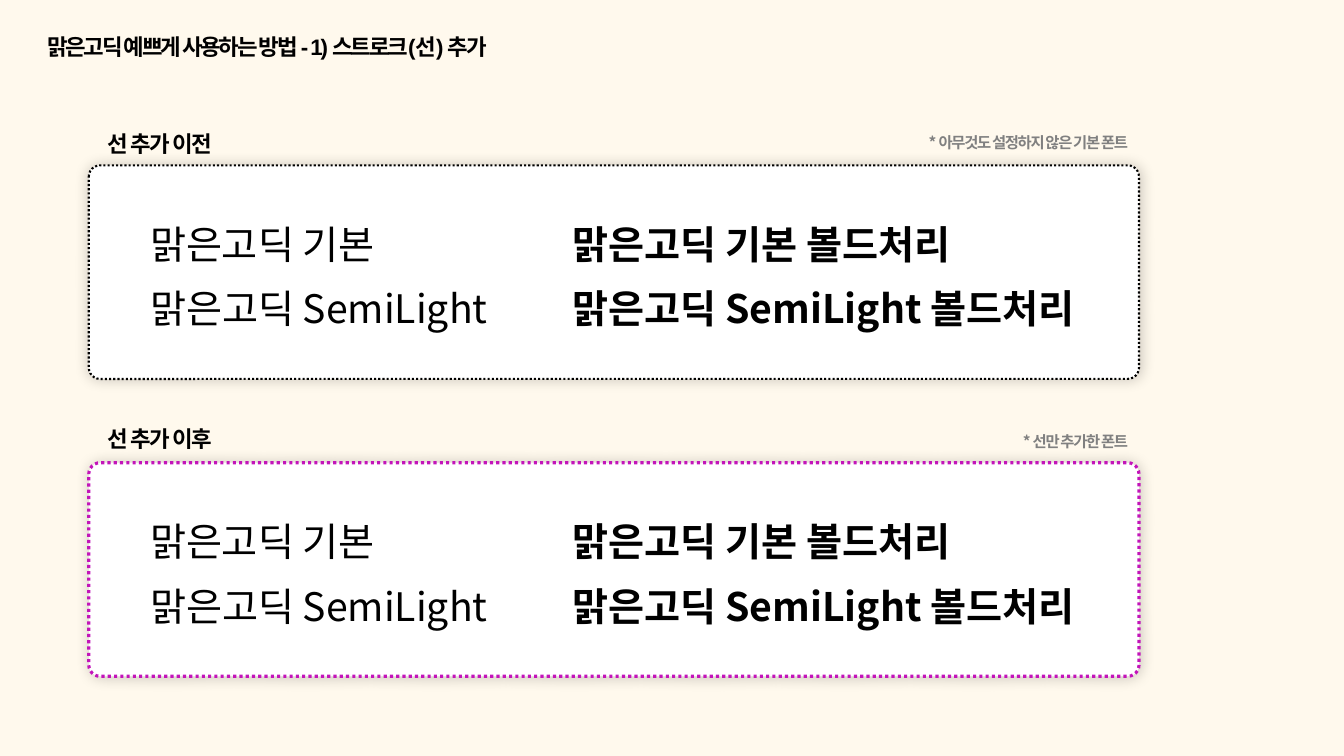
"""Build the slide comparing Malgun Gothic before and after adding an outline."""
from dataclasses import dataclass

from lxml import etree
from pptx import Presentation
from pptx.dml.color import RGBColor
from pptx.enum.dml import MSO_LINE
from pptx.enum.shapes import MSO_SHAPE
from pptx.enum.text import MSO_AUTO_SIZE, PP_ALIGN
from pptx.oxml import parse_xml
from pptx.oxml.ns import nsdecls, qn
from pptx.slide import Slide
from pptx.util import Pt

ROUNDED = MSO_SHAPE.ROUNDED_RECTANGLE
DOTTED = MSO_LINE.ROUND_DOT
GROW = MSO_AUTO_SIZE.SHAPE_TO_FIT_TEXT
LEFT, RIGHT = PP_ALIGN.LEFT, PP_ALIGN.RIGHT


@dataclass(frozen=True)
class Theme:
    """Colours, fonts and type sizes."""
    background: str = "FFF9ED"
    panel: str = "FFFFFF"
    ink: str = "000000"
    accent: str = "C314BA"
    muted: str = "808080"
    latin: str = "Arial"
    korean: str = "Noto Sans CJK KR"
    heading: float = 16
    sample: float = 28
    note: float = 11


@dataclass(frozen=True)
class Box:
    """Position and size in points."""
    left: float
    top: float
    width: float
    height: float


@dataclass(frozen=True)
class Panel:
    """One framed group of font samples with its label and note."""
    top: float
    line_color: str
    line_width: float
    label: str
    label_top: float
    label_height: float
    note: str
    note_box: Box


@dataclass(frozen=True)
class Sample:
    """One font sample within a panel."""
    text: str
    column: int
    row: int
    width: float
    font: str


THEME = Theme()
PANEL_LEFT, PANEL_WIDTH, PANEL_HEIGHT = 63.4, 750.2, 152.6
LABEL_LEFT, LABEL_WIDTH = 69.8, 121
COLUMNS = (100.1, 401.8)
ROW_OFFSET, ROW_PITCH, ROW_HEIGHT = 35.6, 46.1, 41

PANELS = (
    Panel(118.1, THEME.ink, 1.5, "선 추가 이전", 83.5, 29.5,
          "* 아무것도 설정하지 않은 기본 폰트", Box(633.6, 87.8, 179.3, 23)),
    Panel(330.5, THEME.accent, 2.25, "선 추가 이후", 294.5, 32.4,
          "* 선만 추가한 폰트", Box(707.8, 301, 105.1, 24.5)),
)
SAMPLES = (
    Sample("맑은고딕 기본", 0, 0, 218.9, THEME.latin),
    Sample("맑은고딕 SemiLight", 0, 1, 272.2, THEME.korean),
    Sample("맑은고딕 기본 볼드처리", 1, 0, 365.8, THEME.latin),
    Sample("맑은고딕 SemiLight 볼드처리", 1, 1, 406.1, THEME.korean),
)


def add_text(s: Slide, text: str, box: Box, *, size: float, font: str = THEME.latin,
             color: str = THEME.ink, bold: bool = True, spacing: float = 0,
             align: PP_ALIGN = LEFT, line_spacing: float = 1.0) -> None:
    """Add a one-line text box."""
    sp = s.shapes.add_textbox(Pt(box.left), Pt(box.top), Pt(box.width), Pt(box.height))
    tf = sp.text_frame
    tf.word_wrap = True
    tf.auto_size = GROW
    p = tf.paragraphs[0]
    p.alignment = align
    p.line_spacing = line_spacing
    r = p.add_run()
    r.text = text
    r.font.size = Pt(size)
    r.font.bold = bold
    r.font.name = font
    r.font.color.rgb = RGBColor.from_string(color)
    props = r.font._element
    etree.SubElement(props, qn("a:ea")).set("typeface", THEME.korean)
    if spacing:
        props.set("spc", str(round(spacing * 100)))


def add_frame(s: Slide, panel: Panel) -> None:
    """Add a panel's rounded frame with a dotted outline and soft shadow."""
    sp = s.shapes.add_shape(ROUNDED, Pt(PANEL_LEFT), Pt(panel.top),
                            Pt(PANEL_WIDTH), Pt(PANEL_HEIGHT))
    sp.adjustments[0] = 0.053
    sp.fill.solid()
    sp.fill.fore_color.rgb = RGBColor.from_string(THEME.panel)
    sp.line.color.rgb = RGBColor.from_string(panel.line_color)
    sp.line.width = Pt(panel.line_width)
    sp.line.dash_style = DOTTED
    sp.shadow.inherit = False
    effects = sp._element.spPr.find(qn("a:effectLst"))
    effects.append(parse_xml(
        f'<a:outerShdw {nsdecls("a")} blurRad="{Pt(10)}" dist="0" dir="2700000" '
        f'algn="ctr" rotWithShape="0"><a:srgbClr val="{THEME.ink}">'
        '<a:alpha val="20000"/></a:srgbClr></a:outerShdw>'))


def add_panel(s: Slide, panel: Panel) -> None:
    """Add a frame, its samples, its label and its note."""
    add_frame(s, panel)
    for sample in SAMPLES:
        top = panel.top + ROW_OFFSET + sample.row * ROW_PITCH
        add_text(s, sample.text, Box(COLUMNS[sample.column], top, sample.width, ROW_HEIGHT),
                 size=THEME.sample, font=sample.font, bold=sample.column == 1)
    add_text(s, panel.label,
             Box(LABEL_LEFT, panel.label_top, LABEL_WIDTH, panel.label_height),
             size=THEME.heading, spacing=-1, line_spacing=1.3)
    add_text(s, panel.note, panel.note_box, size=THEME.note, font=THEME.korean,
             color=THEME.muted, spacing=-1, align=RIGHT, line_spacing=1.3)


def main() -> None:
    """Build and save the presentation."""
    prs = Presentation()
    prs.slide_width, prs.slide_height = Pt(960), Pt(540)
    s = prs.slides.add_slide(prs.slide_layouts[6])
    s.background.fill.solid()
    s.background.fill.fore_color.rgb = RGBColor.from_string(THEME.background)
    add_text(s, "맑은고딕 예쁘게 사용하는 방법 - 1) 스트로크(선) 추가",
             Box(26.6, 20.2, 372.2, 26.6), size=THEME.heading, spacing=-1.5)
    for panel in PANELS:
        add_panel(s, panel)
    prs.save("out.pptx")


if __name__ == "__main__":
    main()
